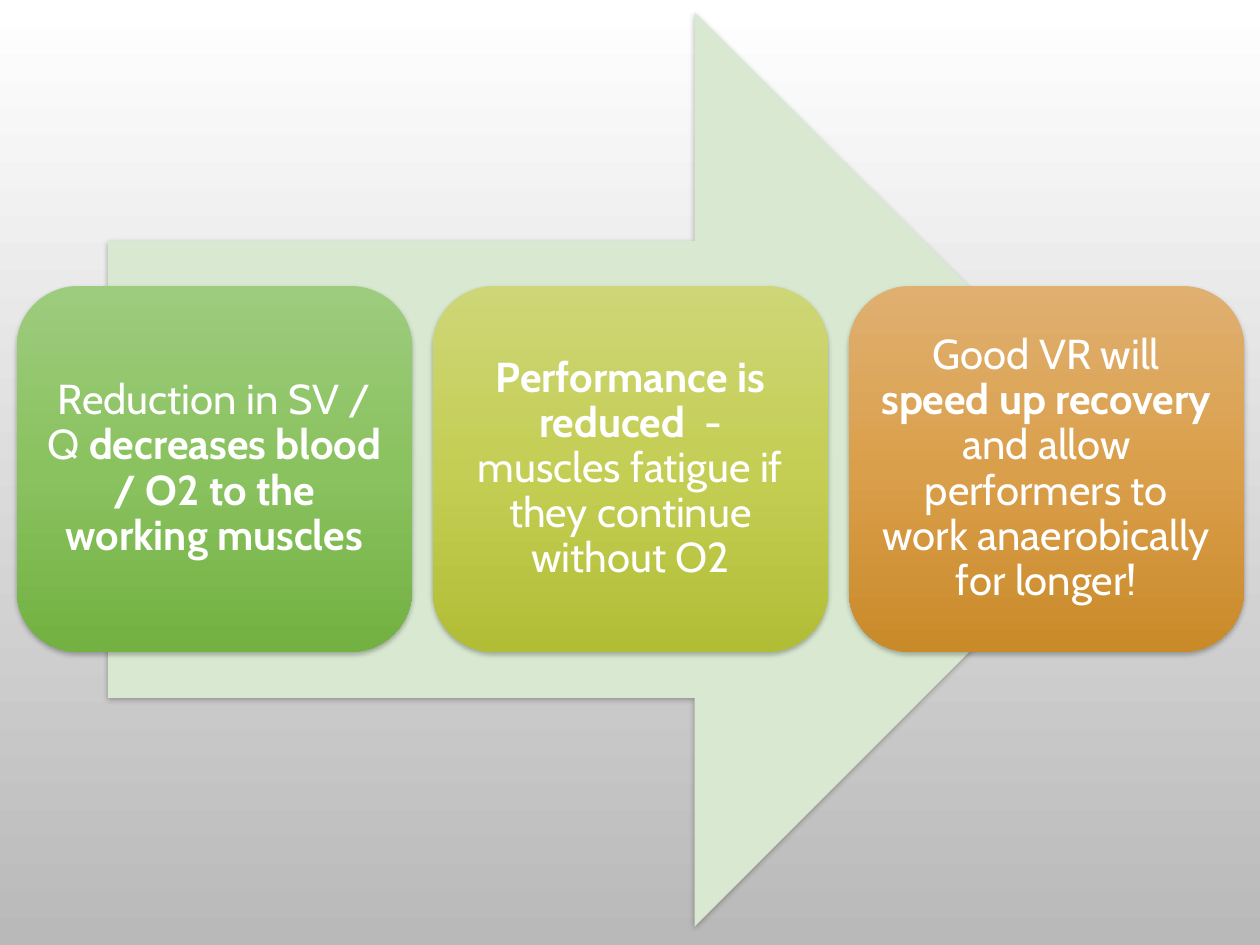
from lxml import etree
from pptx import Presentation, util as u
from pptx.dml.color import RGBColor
from pptx.enum import shapes, text
from pptx.oxml import ns

WIDE, HIGH = 14.22, 10.67
CARDS = [
    (("9ECC7E", "8AC25F", "73B142"),
     [("Reduction in SV / Q ", False),
      ("decreases blood / O2 to the working muscles", True)]),
    (("CED677", "C4CE54", "B2BD36"),
     [("Performance is reduced  ", True),
      ("- muscles fatigue if they continue without O2", False)]),
    (("E0B071", "DA9F4B", "C98A29"),
     [("Good VR will ", False), ("speed up recovery ", True),
      ("and allow performers to work anaerobically for longer!", False)]),
]


def tint(code):
    """Turn a hex string into a colour."""
    return RGBColor.from_string(code)


def add(parent, tag, **attrs):
    """Append a drawing element with the given attributes."""
    return etree.SubElement(parent, ns.qn(tag), {k: str(v) for k, v in attrs.items()})


def blend(fill, host, codes):
    """Fill from top to bottom with evenly spaced colour stops."""
    fill.gradient()
    fill.gradient_angle = 270
    stops = next(host.iter(ns.qn("a:gsLst")))
    for stop in list(stops):
        stops.remove(stop)
    for i, code in enumerate(codes):
        stop = add(stops, "a:gs", pos=100000 * i // (len(codes) - 1))
        add(stop, "a:srgbClr", val=code)


def shade(shape):
    """Give a shape a soft shadow below it and no outline."""
    shape.line.fill.background()
    shape.shadow.inherit = False
    effects = next(shape.element.iter(ns.qn("a:effectLst")))
    drop = add(effects, "a:outerShdw", blurRad=u.Pt(4), dist=u.Pt(2),
               dir=5400000, rotWithShape=0)
    add(add(drop, "a:srgbClr", val="000000"), "a:alpha", val=28000)


def place(slide, kind, box):
    """Add a shadowed preset shape in a box given in inches."""
    shape = slide.shapes.add_shape(kind, *map(u.Inches, box))
    shade(shape)
    return shape


def arrow(slide, box):
    """Draw the pale arrow behind the cards."""
    shape = place(slide, shapes.MSO_SHAPE.RIGHT_ARROW, box)
    shape.fill.solid()
    shape.fill.fore_color.rgb = tint("D9E9D1")


def card(slide, box, codes, runs):
    """Draw one rounded card with its centred statement."""
    shape = place(slide, shapes.MSO_SHAPE.ROUNDED_RECTANGLE, box)
    blend(shape.fill, shape.element, codes)
    frame = shape.text_frame
    frame.word_wrap = True
    frame.vertical_anchor = text.MSO_ANCHOR.MIDDLE
    frame.margin_left = frame.margin_right = u.Inches(0.14)
    frame.margin_top = frame.margin_bottom = u.Inches(0.14)
    para = frame.paragraphs[0]
    para.alignment = text.PP_ALIGN.CENTER
    para.line_spacing = 0.9
    para.font.name = "Cabin"
    para.font.size = u.Pt(34)
    para.font.color.rgb = tint("FFFFFF")
    for words, bold in runs:
        run = para.add_run()
        run.text = words
        run.font.bold = bold


def row(slide, box, width):
    """Spread the cards evenly across a box."""
    left, top, span, height = box
    step = (span - width) / (len(CARDS) - 1)
    for i, (codes, runs) in enumerate(CARDS):
        card(slide, (left + i * step, top, width, height), codes, runs)


def main():
    """Build the slide and save it."""
    deck = Presentation()
    deck.slide_width, deck.slide_height = u.Inches(WIDE), u.Inches(HIGH)
    slide = deck.slides.add_slide(deck.slide_layouts[6])
    blend(slide.background.fill, slide.element, ("FFFFFF", "B9B9B9"))
    arrow(slide, (1.22, 0.14, 11.78, 10.32))
    row(slide, (0.19, 3.23, 13.85, 4.13), 4.46)
    deck.save("out.pptx")


if __name__ == "__main__":
    main()
